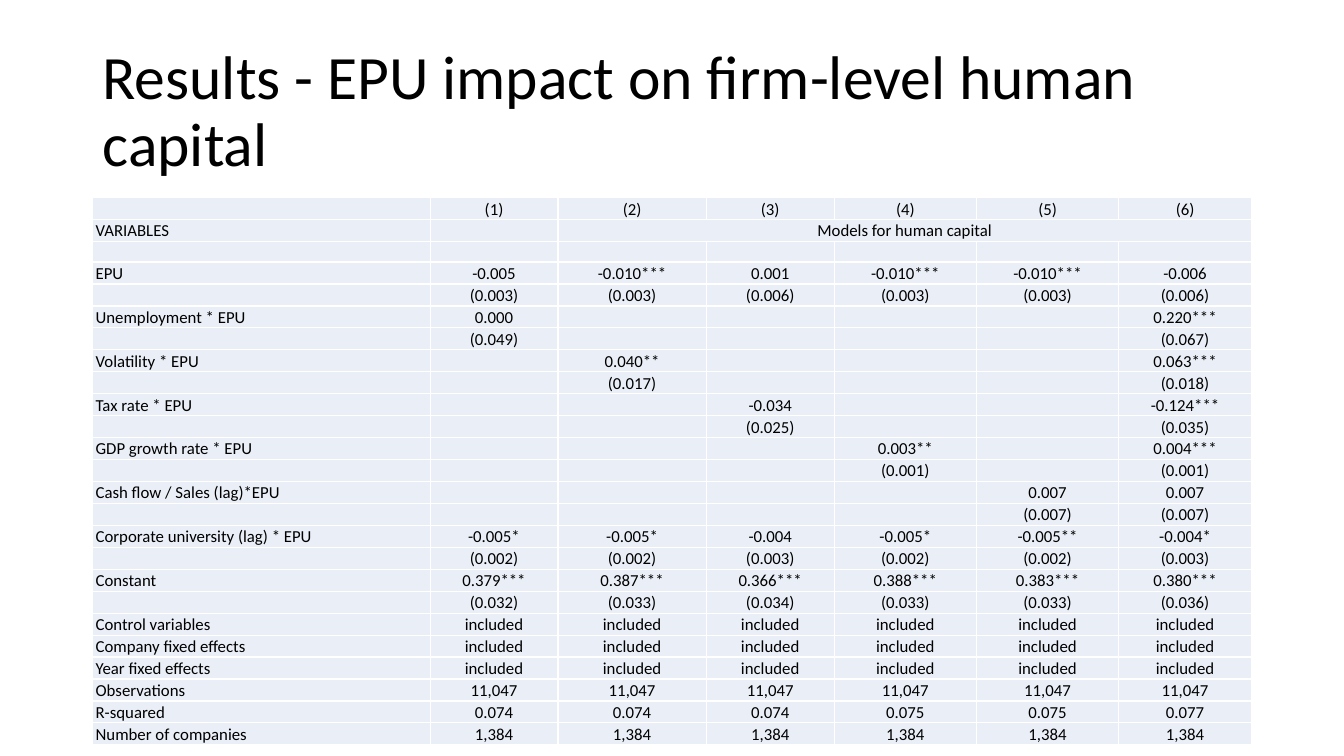
from lxml.etree import SubElement
from pptx import Presentation
from pptx.dml.color import RGBColor
from pptx.enum.text import MSO_ANCHOR, MSO_AUTO_SIZE, PP_ALIGN
from pptx.oxml.ns import qn
from pptx.util import Cm, Pt

TITLE = "Results - EPU impact on firm-level human capital"
MODELS = ("(1)", "(2)", "(3)", "(4)", "(5)", "(6)")
MODELS_LABEL = "Models for human capital"

# variable: {model number: (coefficient, standard error)}
ESTIMATES = {
    "EPU": {1: ("-0.005", "(0.003)"), 2: ("-0.010***", "(0.003)"),
            3: ("0.001", "(0.006)"), 4: ("-0.010***", "(0.003)"),
            5: ("-0.010***", "(0.003)"), 6: ("-0.006", "(0.006)")},
    "Unemployment * EPU": {1: ("0.000", "(0.049)"), 6: ("0.220***", "(0.067)")},
    "Volatility * EPU": {2: ("0.040**", "(0.017)"), 6: ("0.063***", "(0.018)")},
    "Tax rate * EPU": {3: ("-0.034", "(0.025)"), 6: ("-0.124***", "(0.035)")},
    "GDP growth rate * EPU": {4: ("0.003**", "(0.001)"), 6: ("0.004***", "(0.001)")},
    "Cash flow / Sales (lag)*EPU": {5: ("0.007", "(0.007)"), 6: ("0.007", "(0.007)")},
    "Corporate university (lag) * EPU": {
        1: ("-0.005*", "(0.002)"), 2: ("-0.005*", "(0.002)"),
        3: ("-0.004", "(0.003)"), 4: ("-0.005*", "(0.002)"),
        5: ("-0.005**", "(0.002)"), 6: ("-0.004*", "(0.003)")},
    "Constant": {1: ("0.379***", "(0.032)"), 2: ("0.387***", "(0.033)"),
                 3: ("0.366***", "(0.034)"), 4: ("0.388***", "(0.033)"),
                 5: ("0.383***", "(0.033)"), 6: ("0.380***", "(0.036)")},
}
SUMMARY = {
    "Control variables": ("included",) * 6,
    "Company fixed effects": ("included",) * 6,
    "Year fixed effects": ("included",) * 6,
    "Observations": ("11,047",) * 6,
    "R-squared": ("0.074", "0.074", "0.074", "0.075", "0.075", "0.077"),
    "Number of companies": ("1,384",) * 6,
}

BLACK = RGBColor(0x00, 0x00, 0x00)
PALE_BLUE = RGBColor(0xEA, 0xEF, 0xF7)
FONT = "Calibri"
LEFT, WIDTH = Cm(2.33), Cm(29.21)
COLUMN_WIDTHS = (8.51, 3.22, 3.74, 3.22, 3.59, 3.58, 3.35)
ROW_HEIGHT = Cm(0.23)  # rows grow to fit their text
TABLE_HEIGHT = Cm(12.98)
TABLE_SIZE = 12
CELL_FORMAT = {"margin_left": Cm(0.08), "margin_right": Cm(0.08),
               "margin_top": 0, "margin_bottom": 0}
PARAGRAPH_FORMAT = {"line_spacing": 1.07, "space_after": Pt(8)}


def apply(target, values):
    for name, value in values.items():
        setattr(target, name, value)


def style_text(paragraph, size):
    for run in paragraph.runs:
        apply(run.font, {"name": FONT, "size": Pt(size)})
        run.font.color.rgb = BLACK


def result_rows():
    """Return the table as rows of seven strings."""
    rows = [("", *MODELS), ("VARIABLES", "", MODELS_LABEL, "", "", "", ""), ("",) * 7]
    for variable, by_model in ESTIMATES.items():
        for part, label in enumerate((variable, "")):
            rows.append((label, *(by_model.get(model, ("", ""))[part]
                                  for model in range(1, 7))))
    return rows + [(label, *values) for label, values in SUMMARY.items()]


def add_title(slide):
    title = slide.shapes.title
    apply(title, {"left": LEFT, "top": Cm(1.01), "width": WIDTH, "height": Cm(3.68)})
    frame = title.text_frame
    frame.text = TITLE
    apply(frame, {"vertical_anchor": MSO_ANCHOR.MIDDLE, "word_wrap": True,
                  "auto_size": MSO_AUTO_SIZE.NONE})
    heading = frame.paragraphs[0]
    apply(heading, {"alignment": PP_ALIGN.LEFT, "line_spacing": 0.9})
    style_text(heading, 44)


def fill_cell(cell, text, alignment):
    apply(cell, CELL_FORMAT)
    cell.fill.solid()
    cell.fill.fore_color.rgb = PALE_BLUE
    paragraph = cell.text_frame.paragraphs[0]
    apply(paragraph, {**PARAGRAPH_FORMAT, "alignment": alignment})
    if text:
        paragraph.add_run().text = text
        style_text(paragraph, TABLE_SIZE)
    else:  # keeps an empty cell as low as the others
        SubElement(paragraph._p, qn("a:endParaRPr"), sz=str(TABLE_SIZE * 100))


def add_results(slide):
    rows = result_rows()
    frame = slide.shapes.add_table(len(rows), len(COLUMN_WIDTHS), LEFT, Cm(4.98),
                                   WIDTH, TABLE_HEIGHT)
    results = frame.table
    apply(results, {"first_row": False, "horz_banding": False})
    for column, width in zip(results.columns, COLUMN_WIDTHS):
        column.width = Cm(width)
    for r, values in enumerate(rows):
        results.rows[r].height = ROW_HEIGHT
        for c, text in enumerate(values):
            fill_cell(results.cell(r, c), text,
                      PP_ALIGN.CENTER if c else PP_ALIGN.LEFT)
    results.cell(1, 2).merge(results.cell(1, 6))
    frame.height = TABLE_HEIGHT


def main():
    deck = Presentation()
    apply(deck, {"slide_width": Cm(33.87), "slide_height": Cm(19.05)})
    slide = deck.slides.add_slide(deck.slide_layouts[5])
    add_title(slide)
    add_results(slide)
    deck.save("out.pptx")


if __name__ == "__main__":
    main()
